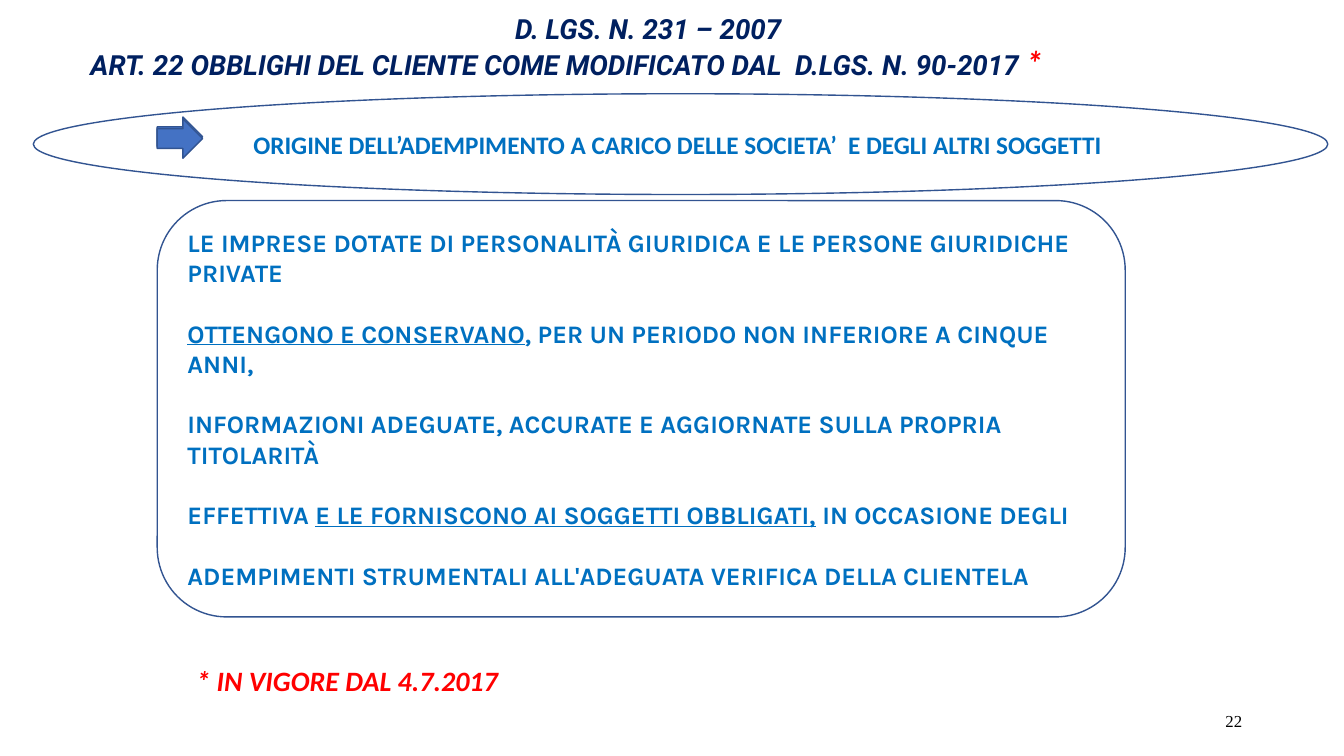
from pptx import Presentation
from pptx import util as u
from pptx.dml.color import RGBColor
from pptx.enum import shapes, text

COLORS = {"navy": "002060", "red": "FF0000", "blue": "0070C0",
          "outline": "325491", "arrow": "4472C4", "black": "000000"}
WIDTH, HEIGHT = u.Inches(13.33), u.Inches(7.5)
COLUMN, ROW = WIDTH / 100, HEIGHT / 100
LEFT, CENTER, RIGHT = text.PP_ALIGN.LEFT, text.PP_ALIGN.CENTER, text.PP_ALIGN.RIGHT
MIDDLE, BOTTOM = text.MSO_ANCHOR.MIDDLE, text.MSO_ANCHOR.BOTTOM


def to_emu(box):
    """Turn left, top, width, height in grid columns and rows into lengths."""
    left, top, width, height = box
    return [u.Emu(round(part)) for part in
            (left * COLUMN, top * ROW, width * COLUMN, height * ROW)]


def prepare_frame(shape, anchor):
    frame = shape.text_frame
    frame.word_wrap = True
    frame.auto_size = text.MSO_AUTO_SIZE.NONE
    frame.vertical_anchor = anchor
    frame.margin_left = frame.margin_right = u.Inches(0.1)
    frame.margin_top = frame.margin_bottom = u.Inches(0.05)
    return frame


def format_para(para, align=LEFT, indent=0, spacing=1.0, before=0):
    para.alignment = align
    para.line_spacing = spacing
    para.space_before = u.Pt(before)
    properties = para._p.get_or_add_pPr()
    properties.set("marL", str(round(indent * COLUMN)))
    properties.set("indent", "0")


def add_span(para, words, font="Calibri", size=18, color="blue",
             bold=True, italic=False, underline=False):
    span = para.add_run()
    span.text = words
    span.font.name, span.font.size = font, u.Pt(size)
    span.font.bold, span.font.italic = bold, italic
    span.font.underline = underline
    span.font.color.rgb = RGBColor.from_string(COLORS[color])


def add_outlined(page, kind, box, fill=None):
    shape = page.shapes.add_shape(kind, *to_emu(box))
    shape.shadow.inherit = False
    if fill:
        shape.fill.solid()
        shape.fill.fore_color.rgb = RGBColor.from_string(COLORS[fill])
    else:
        shape.fill.background()
    shape.line.color.rgb = RGBColor.from_string(COLORS["outline"])
    shape.line.width = u.Pt(1)
    return shape


def add_title(page, box):
    title = page.shapes.title
    title.left, title.top, title.width, title.height = to_emu(box)
    frame = prepare_frame(title, BOTTOM)
    style = dict(font="Roboto", size=19.8, color="navy", italic=True)
    law = frame.paragraphs[0]
    format_para(law, indent=35.1, spacing=0.9)
    add_span(law, "D. LGS. N. 231 – 2007", **style)
    article = frame.add_paragraph()
    format_para(article, indent=3.5, spacing=0.9)
    add_span(article, "ART. 22 OBBLIGHI DEL CLIENTE COME MODIFICATO DAL  D.LGS. N. 90-2017 ", **style)
    add_span(article, "*", size=24.3, color="red", italic=True)


def add_banner(page, box):
    """Ellipse with its heading and a doubled arrow at the left."""
    ellipse = add_outlined(page, shapes.MSO_SHAPE.OVAL, box)
    para = prepare_frame(ellipse, MIDDLE).paragraphs[0]
    format_para(para, align=CENTER)
    add_span(para, "ORIGINE DELL’ADEMPIMENTO A CARICO DELLE SOCIETA’  E DEGLI ALTRI SOGGETTI ")
    for drop in (3.07, 3.33):
        add_outlined(page, shapes.MSO_SHAPE.RIGHT_ARROW,
                     (box[0] + 9.22, box[1] + drop, 3.38, 5.2), fill="arrow")


def add_duties(page, box):
    """Rounded panel; each paragraph is a list of (words, underlined)."""
    duties = [
        [("LE IMPRESE DOTATE DI PERSONALITÀ GIURIDICA E LE PERSONE GIURIDICHE PRIVATE", False)],
        [("OTTENGONO E CONSERVANO", True),
         (", PER UN PERIODO NON INFERIORE A CINQUE ANNI,", False)],
        [("INFORMAZIONI ADEGUATE, ACCURATE E AGGIORNATE SULLA PROPRIA TITOLARITÀ", False)],
        [("EFFETTIVA ", False),
         ("E LE FORNISCONO AI SOGGETTI OBBLIGATI,", True),
         (" IN OCCASIONE DEGLI", False)],
        [("ADEMPIMENTI STRUMENTALI ALL'ADEGUATA VERIFICA DELLA CLIENTELA", False)],
    ]
    panel = add_outlined(page, shapes.MSO_SHAPE.ROUNDED_RECTANGLE, box)
    frame = prepare_frame(panel, MIDDLE)
    for index, duty in enumerate(duties):
        para = frame.add_paragraph() if index else frame.paragraphs[0]
        format_para(para, before=21.6 if index else 0)
        for words, underlined in duty:
            add_span(para, words, font="Karla", underline=underlined)


def add_note(page, box, words, anchor, align=LEFT, indent=0, spacing=1.0, **style):
    note = page.shapes.add_textbox(*to_emu(box))
    para = prepare_frame(note, anchor).paragraphs[0]
    format_para(para, align, indent, spacing)
    add_span(para, words, **style)


def main():
    deck = Presentation()
    deck.slide_width, deck.slide_height = WIDTH, HEIGHT
    page = deck.slides.add_slide(deck.slide_layouts[5])
    add_title(page, (2.48, 2, 92.87, 9.6))
    add_duties(page, (11.7, 26.53, 72.02, 55.07))
    add_banner(page, (2.48, 12.4, 96.32, 13.33))
    add_note(page, (4.28, 84.53, 92.87, 8.27), "* IN VIGORE DAL 4.7.2017", BOTTOM,
             indent=9.6, spacing=0.7, size=20, color="red", italic=True)
    add_note(page, (70.67, 92.67, 22.5, 5.33), "22", MIDDLE, align=RIGHT,
             font="Times New Roman", size=12, color="black", bold=False)
    deck.save("out.pptx")


if __name__ == "__main__":
    main()
